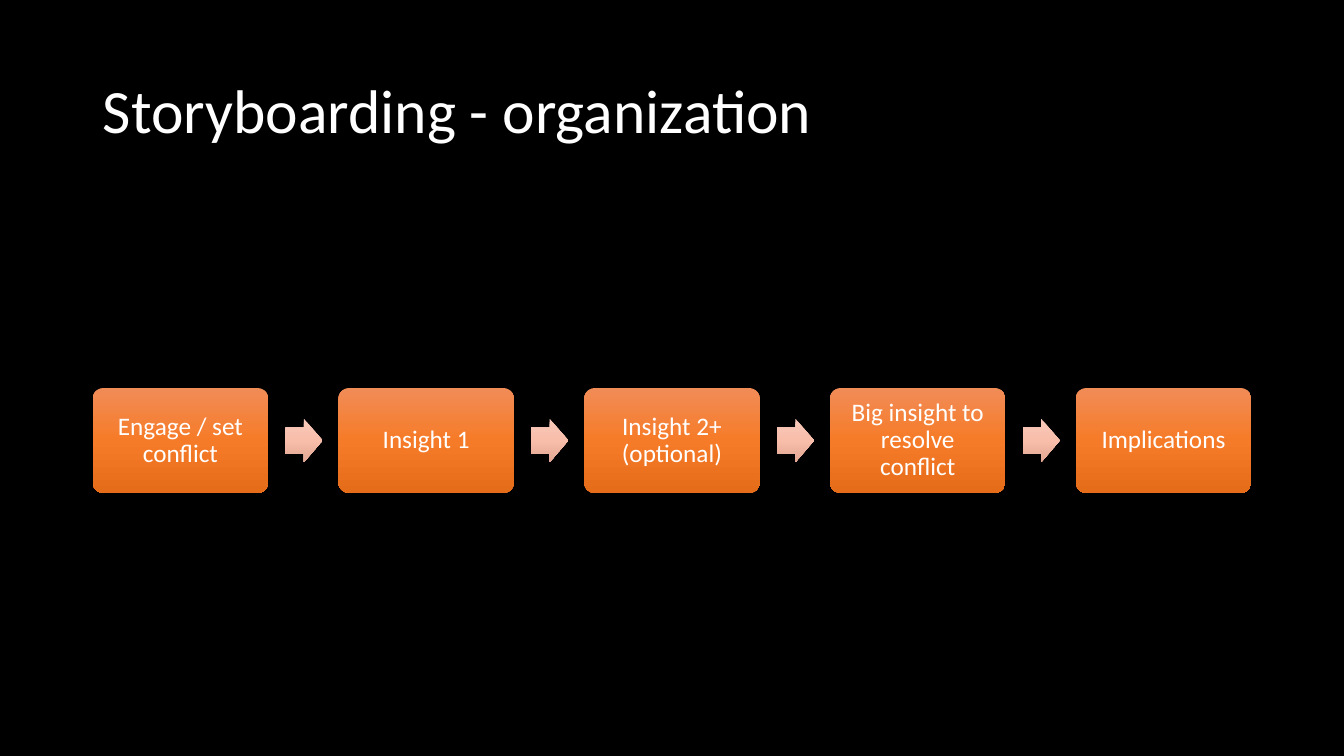
from copy import deepcopy

from pptx import Presentation
from pptx.dml.color import RGBColor
from pptx.enum.shapes import MSO_SHAPE
from pptx.enum.text import MSO_ANCHOR, MSO_AUTO_SIZE, PP_ALIGN
from pptx.oxml.ns import qn
from pptx.util import Inches, Pt

FONT = "Calibri"
WHITE = "FFFFFF"
STEP_COLORS = ["F18C57", "F67B28", "E56C19"]
ARROW_COLORS = ["F7C9BA", "F8BEAA", "E2A692"]
STEPS = [
    "Engage / set conflict",
    "Insight 1",
    "Insight 2+ (optional)",
    "Big insight to resolve conflict",
    "Implications",
]


def rgb(value):
    """Turn a hex string into a colour."""
    return RGBColor.from_string(value)


def write(tf, text, size, color=WHITE, align=PP_ALIGN.LEFT, margin=None):
    """Put one formatted paragraph into a text frame."""
    tf.word_wrap = True
    tf.auto_size = MSO_AUTO_SIZE.NONE
    tf.vertical_anchor = MSO_ANCHOR.MIDDLE
    if margin is not None:
        tf.margin_left = tf.margin_right = Inches(margin)
        tf.margin_top = tf.margin_bottom = Inches(margin)
    p = tf.paragraphs[0]
    p.alignment = align
    p.line_spacing = 0.9
    r = p.add_run()
    r.text = text
    r.font.name = FONT
    r.font.size = Pt(size)
    r.font.color.rgb = rgb(color)


def fill_gradient(sp, colors):
    """Fill a shape from top to bottom with evenly spaced colours."""
    sp.fill.gradient()
    sp.fill.gradient_angle = 270
    stops = sp._element.spPr.find(qn("a:gradFill")).find(qn("a:gsLst"))
    while len(stops) < len(colors):
        stops.append(deepcopy(stops[0]))
    for i, (stop, color) in enumerate(zip(sp.fill.gradient_stops, colors)):
        stop.position = i / (len(colors) - 1)
        stop.color.rgb = rgb(color)


def add_block(shapes, kind, box, colors, adjustments):
    """Add a borderless gradient shape in the given box."""
    sp = shapes.add_shape(kind, *[Inches(v) for v in box])
    sp.shadow.inherit = False
    sp.line.fill.background()
    fill_gradient(sp, colors)
    for i, value in enumerate(adjustments):
        sp.adjustments[i] = value
    return sp


def add_title(s, text, box):
    """Place the slide title in the given box."""
    title = s.shapes.title
    title.left, title.top, title.width, title.height = [Inches(v) for v in box]
    write(title.text_frame, text, 44)


def add_process(s, steps, box):
    """Spread the steps over the given box, with arrows between them."""
    left, top, width, height = box
    step_w, arrow_w, arrow_h, arrow_gap = 1.74, 0.37, 0.43, 0.17
    pitch = (width - step_w) / (len(steps) - 1)
    arrow_top = top + (height - arrow_h) / 2
    group = s.shapes.add_group_shape()
    for i, text in enumerate(steps):
        x = left + i * pitch
        if i:
            arrow_x = x - pitch + step_w + arrow_gap
            add_block(group.shapes, MSO_SHAPE.RIGHT_ARROW,
                      (arrow_x, arrow_top, arrow_w, arrow_h),
                      ARROW_COLORS, [0.6, 0.5])
        step = add_block(group.shapes, MSO_SHAPE.ROUNDED_RECTANGLE,
                         (x, top, step_w, height), STEP_COLORS, [0.1])
        write(step.text_frame, text, 18, align=PP_ALIGN.CENTER, margin=0.1)


def main():
    """Build and save the presentation."""
    prs = Presentation()
    prs.slide_width, prs.slide_height = Inches(13.33), Inches(7.5)
    s = prs.slides.add_slide(prs.slide_layouts[5])
    s.background.fill.solid()
    s.background.fill.fore_color.rgb = rgb("000000")
    add_title(s, "Storyboarding - organization", (0.92, 0.4, 11.5, 1.45))
    add_process(s, STEPS, (0.92, 3.85, 11.49, 1.04))
    prs.save("out.pptx")


if __name__ == "__main__":
    main()
